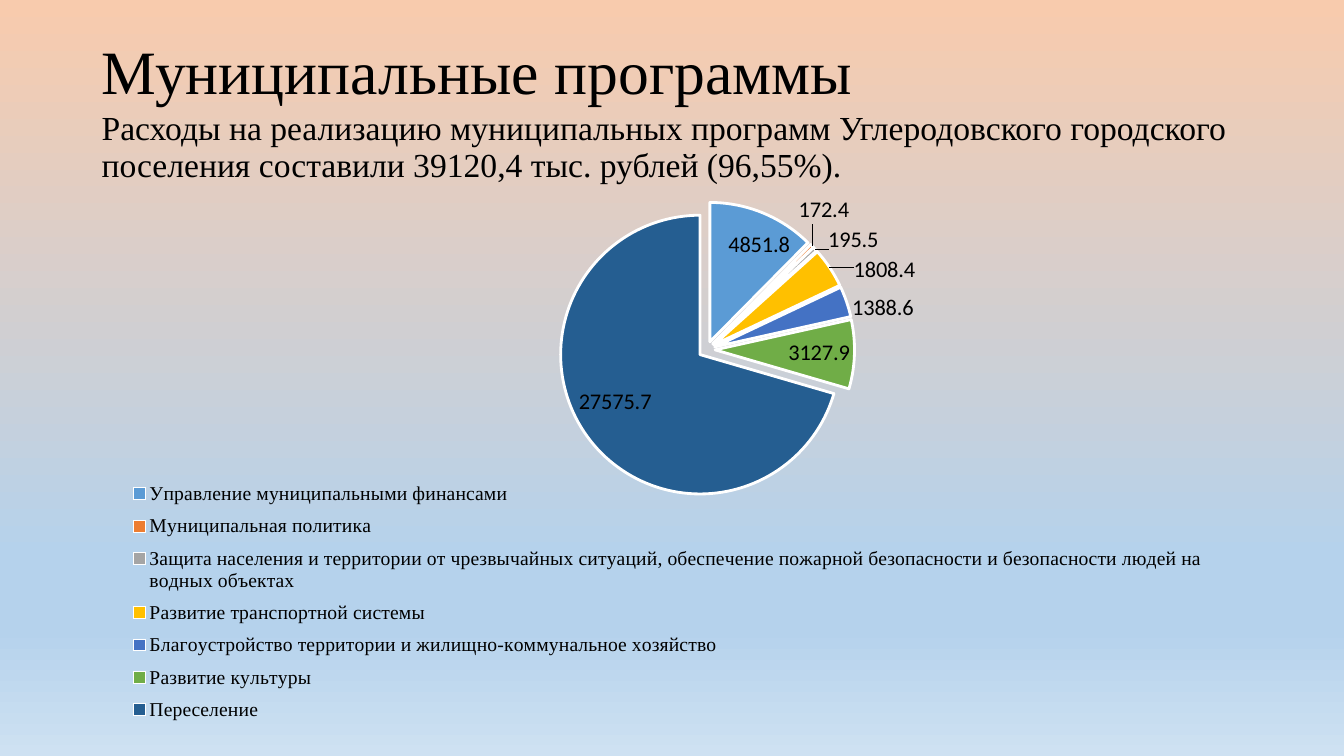
from lxml import etree
from pptx import Presentation
from pptx.chart.data import CategoryChartData
from pptx.dml.color import RGBColor
from pptx.enum import chart as ch, text
from pptx.oxml import parse_xml
from pptx.oxml.ns import nsdecls, qn
from pptx.util import Inches, Pt

BLACK = RGBColor(0x00, 0x00, 0x00)
WHITE = RGBColor(0xFF, 0xFF, 0xFF)
SERIF = "Times New Roman"
BACKGROUND_STOPS = [(0, "F8CBAD"), (74, "B5D2EC"), (83, "B5D2EC"), (100, "CEE1F2")]
PROGRAMS = [
    ("Управление муниципальными финансами", 4851.8, RGBColor(0x5B, 0x9B, 0xD5)),
    ("Муниципальная политика", 172.4, RGBColor(0xED, 0x7D, 0x31)),
    ("Защита населения и территории от чрезвычайных ситуаций, обеспечение пожарной "
     "безопасности и безопасности людей на водных объектах", 195.5, RGBColor(0xA5, 0xA5, 0xA5)),
    ("Развитие транспортной системы", 1808.4, RGBColor(0xFF, 0xC0, 0x00)),
    ("Благоустройство территории и жилищно-коммунальное хозяйство", 1388.6,
     RGBColor(0x44, 0x72, 0xC4)),
    ("Развитие культуры", 3127.9, RGBColor(0x70, 0xAD, 0x47)),
    ("Переселение", 27575.7, RGBColor(0x25, 0x5E, 0x91)),
]


def write_text(box, wording, size, anchor):
    frame = box.text_frame
    frame.word_wrap = True
    frame.auto_size = text.MSO_AUTO_SIZE.NONE
    frame.vertical_anchor = anchor
    frame.text = wording
    paragraph = frame.paragraphs[0]
    paragraph.alignment = text.PP_ALIGN.LEFT
    paragraph.line_spacing = 0.9
    set_font(paragraph.runs[0].font, size, SERIF)


def set_font(font, size, name):
    for attribute, value in {"size": Pt(size), "name": name, "bold": False}.items():
        setattr(font, attribute, value)
    font.color.rgb = BLACK


prs = Presentation()
prs.slide_width, prs.slide_height = Inches(13.33), Inches(7.5)
slide = prs.slides.add_slide(prs.slide_layouts[5])

# Background gradient, top to bottom
background = slide.background.fill
background.gradient()
background.gradient_angle = 270
stops = slide.background._cSld.find(".//" + qn("a:gsLst"))
for stop in list(stops):
    stops.remove(stop)
for percent, colour in BACKGROUND_STOPS:
    stop = etree.SubElement(stops, qn("a:gs"), pos=str(percent * 1000))
    etree.SubElement(stop, qn("a:srgbClr"), val=colour)

# Heading and summary
title = slide.shapes.title
title.left, title.top, title.width, title.height = map(Inches, (0.91, 0.19, 11.5, 0.93))
write_text(title, "Муниципальные программы", 44, text.MSO_ANCHOR.BOTTOM)

summary = slide.shapes.add_textbox(*map(Inches, (0.91, 1.06, 11.5, 1)))
write_text(summary, "Расходы на реализацию муниципальных программ Углеродовского городского "
           "поселения составили 39120,4 тыс. рублей (96,55%).", 24, text.MSO_ANCHOR.TOP)

# Spending by program
spending = CategoryChartData()
spending.categories = [name for name, _, _ in PROGRAMS]
spending.add_series("Series 1", [amount for _, amount, _ in PROGRAMS])
chart = slide.shapes.add_chart(
    ch.XL_CHART_TYPE.PIE, *map(Inches, (0.51, 1.85, 11.65, 5.46)), spending).chart
chart.has_title = False
set_font(chart.font, 10, "Calibri")
chart.has_legend = True
chart.legend.position = ch.XL_LEGEND_POSITION.BOTTOM
chart.legend.include_in_layout = False
set_font(chart.legend.font, 14, SERIF)

pie = chart.plots[0]
pie.vary_by_categories = True
series = pie.series[0]
for index, (_, _, colour) in enumerate(PROGRAMS):
    sector = series.points[index].format
    sector.fill.solid()
    sector.fill.fore_color.rgb = colour
    sector.line.color.rgb = WHITE
    sector.line.width = Pt(2)
first_point = series._element.find(qn("c:dPt"))
first_point.addprevious(parse_xml(f'<c:explosion {nsdecls("c")} val="6"/>'))
for point in series._element.findall(qn("c:dPt")):
    point.find(qn("c:spPr")).addprevious(parse_xml(f'<c:explosion {nsdecls("c")} val="6"/>'))

labels = series.data_labels
labels.show_value = True
labels.show_percentage = False
labels.show_legend_key = False
labels.position = ch.XL_LABEL_POSITION.BEST_FIT
set_font(labels.font, 16, "Calibri")

# Places of the pie and the legend, as shares of the chart
plot_area = chart._chartSpace.chart.plotArea
for part, target, (x, y, w, h) in [
    (plot_area, '<c:layoutTarget val="inner"/>', (0.129, 0.028, 0.858, 0.537)),
    (chart.legend._element, "", (0.06, 0.52, 0.93, 0.47)),
]:
    for old in part.findall(qn("c:layout")):
        part.remove(old)
    layout = parse_xml(
        f'<c:layout {nsdecls("c")}><c:manualLayout>{target}'
        f'<c:xMode val="edge"/><c:yMode val="edge"/><c:x val="{x}"/><c:y val="{y}"/>'
        f'<c:w val="{w}"/><c:h val="{h}"/></c:manualLayout></c:layout>')
    if part is plot_area:
        part.insert(0, layout)
    else:
        part.find(qn("c:legendPos")).addnext(layout)

prs.save("out.pptx")
